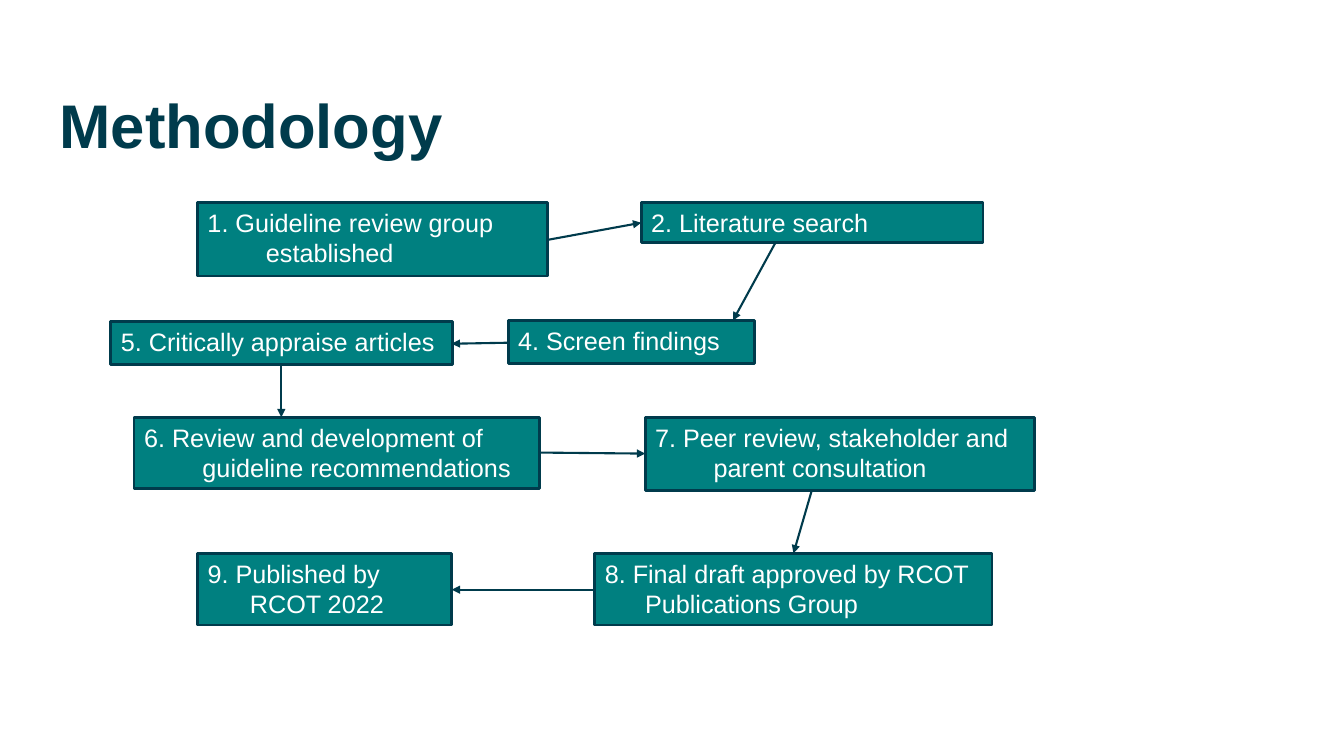
from dataclasses import dataclass

from lxml.etree import SubElement
from pptx import Presentation
from pptx.dml.color import RGBColor
from pptx.enum.shapes import MSO_CONNECTOR, MSO_SHAPE
from pptx.enum.text import MSO_ANCHOR, MSO_AUTO_SIZE, PP_ALIGN
from pptx.oxml.ns import qn
from pptx.util import Inches, Pt


@dataclass(frozen=True)
class Theme:
    font: str = "Arial"
    dark: RGBColor = RGBColor(0x00, 0x3B, 0x4C)
    teal: RGBColor = RGBColor(0x00, 0x80, 0x80)
    white: RGBColor = RGBColor(0xFF, 0xFF, 0xFF)
    title_size: Pt = Pt(44)
    step_size: Pt = Pt(18)
    box_line: Pt = Pt(2)
    arrow_line: Pt = Pt(1.5)


theme = Theme()


def style_text(p, size, color):
    p.font.name = theme.font
    p.font.size = size
    p.font.color.rgb = color


prs = Presentation()
prs.slide_width, prs.slide_height = Inches(13.33), Inches(7.5)
slide = prs.slides.add_slide(prs.slide_layouts[6])

# Title
title = slide.shapes.add_textbox(Inches(0.59), Inches(0.88), Inches(11.22), Inches(0.79))
tf = title.text_frame
tf.word_wrap = True
tf.vertical_anchor = MSO_ANCHOR.MIDDLE
tf.margin_left = tf.margin_right = tf.margin_top = tf.margin_bottom = 0
p = tf.paragraphs[0]
p.text = "Methodology"
p.line_spacing = 0.9
style_text(p, theme.title_size, theme.dark)
p.font.bold = True

# Steps: left, top, width, height, then (text, left margin, first-line indent) per paragraph
steps = [
    (1.96, 2.01, 3.47, 0.73, [("1. Guideline review group established", 0.58, -0.58)]),
    (6.36, 2.01, 3.39, 0.4, [("2. Literature search", 0.58, -0.58)]),
    (1.1, 3.19, 3.39, 0.43, [("5. Critically appraise articles", 0, 0)]),
    (1.33, 4.14, 4.02, 0.71,
     [("6. Review and development of guideline recommendations", 0.58, -0.58)]),
    (5.04, 3.18, 2.44, 0.43, [("4. Screen findings", 0, 0)]),
    (6.4, 4.14, 3.86, 0.73,
     [("7. Peer review, stakeholder and parent consultation", 0.58, -0.58)]),
    (5.9, 5.49, 3.94, 0.71,
     [("8. Final draft approved by RCOT Publications Group", 0.4, -0.4)]),
    (1.96, 5.49, 2.52, 0.71, [("9. Published by", 0.58, -0.58), ("RCOT 2022", 0.42, 0)]),
]
for left, top, width, height, paragraphs in steps:
    s = slide.shapes.add_shape(
        MSO_SHAPE.RECTANGLE, Inches(left), Inches(top), Inches(width), Inches(height))
    s.shadow.inherit = False
    s.fill.solid()
    s.fill.fore_color.rgb = theme.teal
    s.line.color.rgb = theme.dark
    s.line.width = theme.box_line
    tf = s.text_frame
    tf.word_wrap = True
    tf.auto_size = MSO_AUTO_SIZE.SHAPE_TO_FIT_TEXT
    tf.vertical_anchor = MSO_ANCHOR.TOP
    for i, (text, margin, indent) in enumerate(paragraphs):
        p = tf.add_paragraph() if i else tf.paragraphs[0]
        p.text = text
        p.alignment = PP_ALIGN.LEFT
        pPr = p._p.get_or_add_pPr()
        pPr.set("marL", str(Inches(margin)))
        pPr.set("indent", str(Inches(indent)))
        style_text(p, theme.step_size, theme.white)

# Arrows: start x, start y, end x, end y
arrows = [
    (5.43, 2.38, 6.36, 2.21),
    (7.69, 2.41, 7.27, 3.18),
    (5.04, 3.4, 4.48, 3.41),
    (2.79, 3.62, 2.79, 4.14),
    (5.35, 4.49, 6.4, 4.5),
    (8.05, 4.87, 7.87, 5.49),
    (5.9, 5.85, 4.48, 5.85),
]
for points in arrows:
    arrow = slide.shapes.add_connector(MSO_CONNECTOR.STRAIGHT, *map(Inches, points))
    arrow.line.color.rgb = theme.dark
    arrow.line.width = theme.arrow_line
    SubElement(arrow.line._get_or_add_ln(), qn("a:tailEnd"), type="triangle")
    SubElement(arrow._element.spPr, qn("a:effectLst"))

prs.save("out.pptx")
